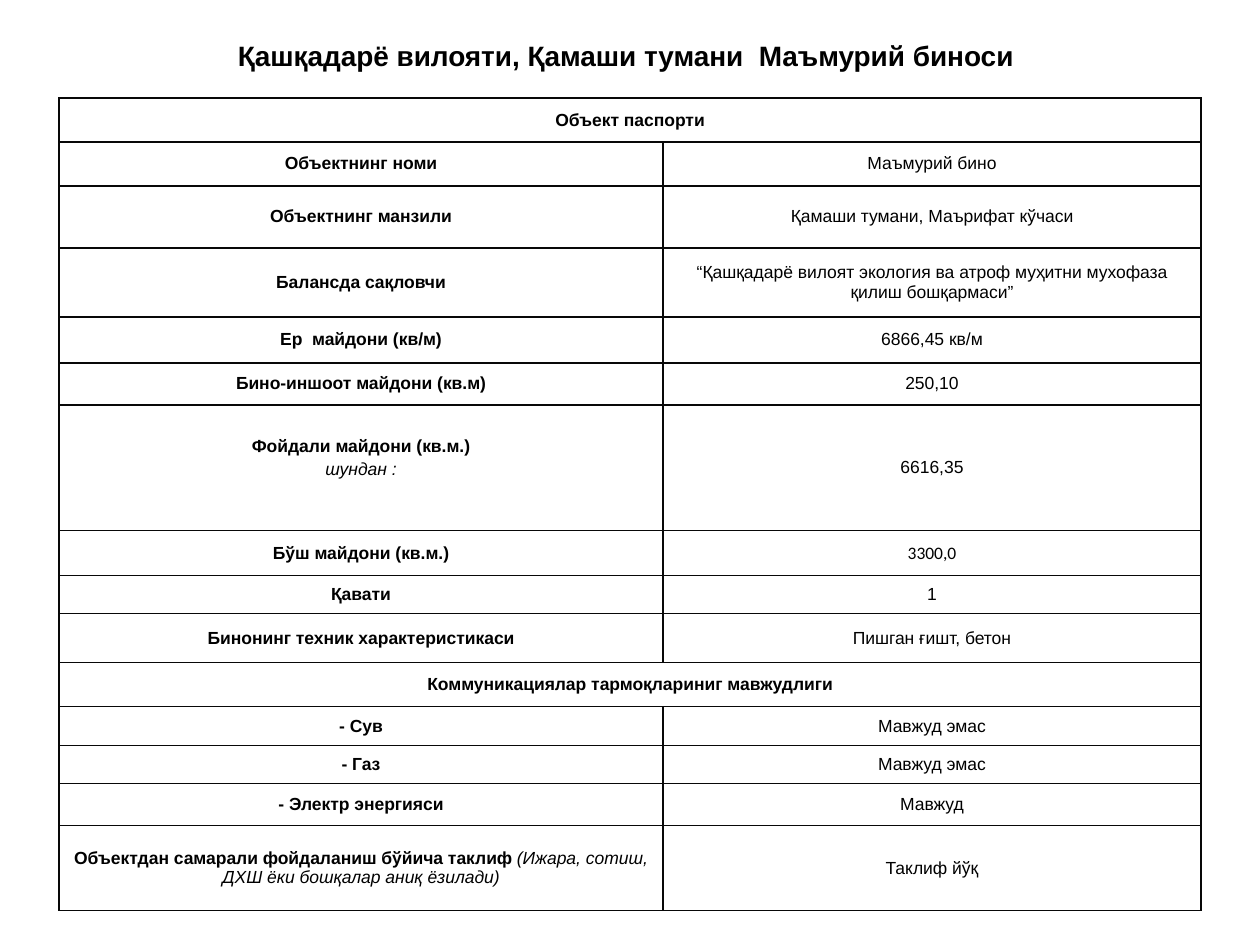
from dataclasses import dataclass

import lxml.etree
import pptx
import pptx.dml.color
import pptx.enum.text
import pptx.oxml.ns
import pptx.util

PX = 914400 // 126
BLACK = pptx.dml.color.RGBColor(0x00, 0x00, 0x00)
NEAR_BLACK = pptx.dml.color.RGBColor(0x08, 0x08, 0x08)
MIDDLE = pptx.enum.text.MSO_ANCHOR.MIDDLE
CENTER = pptx.enum.text.PP_ALIGN.CENTER

COLUMN_WIDTHS = (604, 538)
TABLE_LEFT, TABLE_TOP = 59, 98
MARGIN_X, MARGIN_Y = 11, 6


@dataclass(frozen=True)
class PassportRow:
    height: int
    label: str
    value: str | None = None  # None makes a heading across both columns
    note: str = ""  # italic text after the label
    note_on_new_line: bool = False
    value_font: str = "Arial"
    label_raise: int = 0


ROWS = (
    PassportRow(44, "Объект паспорти"),
    PassportRow(44, "Объектнинг номи", "Маъмурий бино"),
    PassportRow(62, "Объектнинг манзили", "Қамаши тумани, Маърифат кўчаси"),
    PassportRow(69, "Балансда сақловчи",
                "“Қашқадарё вилоят экология ва атроф муҳитни мухофаза қилиш бошқармаси”"),
    PassportRow(46, "Ер  майдони (кв/м)", "6866,45 кв/м"),
    PassportRow(42, "Бино-иншоот майдони (кв.м)", "250,10"),
    PassportRow(126, "Фойдали майдони (кв.м.)", "6616,35", note="шундан :",
                note_on_new_line=True, label_raise=10),
    PassportRow(45, "Бўш майдони (кв.м.)", "3300,0", value_font="Calibri"),
    PassportRow(38, "Қавати", "1"),
    PassportRow(49, "Бинонинг техник характеристикаси", "Пишган ғишт, бетон"),
    PassportRow(44, "Коммуникациялар тармоқлариниг мавжудлиги"),
    PassportRow(39, "- Сув", "Мавжуд эмас"),
    PassportRow(38, "- Газ", "Мавжуд эмас"),
    PassportRow(42, "- Электр энергияси", "Мавжуд"),
    PassportRow(85, "Объектдан самарали фойдаланиш бўйича таклиф ", "Таклиф йўқ",
                note="(Ижара, сотиш, ДХШ ёки бошқалар аниқ ёзилади)"),
)


def style_paragraph(paragraph, size: int = 10, name: str = "Arial") -> None:
    paragraph.alignment = CENTER
    paragraph.font.size = pptx.util.Pt(size)
    paragraph.font.name = name
    paragraph.font.color.rgb = BLACK


def add_run(paragraph, text: str, bold: bool = False, italic: bool = False) -> None:
    run = paragraph.add_run()
    run.text = text
    run.font.bold = bold
    run.font.italic = italic


def format_cell(cell) -> None:
    """Clear the style's fill and draw a thin line on every side."""
    cell.vertical_anchor = MIDDLE
    cell.margin_left = cell.margin_right = MARGIN_X * PX
    cell.margin_top = cell.margin_bottom = MARGIN_Y * PX
    properties = cell._tc.get_or_add_tcPr()
    for side in ("lnL", "lnR", "lnT", "lnB"):
        line = lxml.etree.SubElement(properties, pptx.oxml.ns.qn(f"a:{side}"),
                                     w=str(pptx.util.Pt(1)))
        fill = lxml.etree.SubElement(line, pptx.oxml.ns.qn("a:solidFill"))
        lxml.etree.SubElement(fill, pptx.oxml.ns.qn("a:srgbClr"), val=str(NEAR_BLACK))
    cell.fill.background()


def fill_label(cell, row: PassportRow) -> None:
    paragraph = cell.text_frame.paragraphs[0]
    style_paragraph(paragraph)
    add_run(paragraph, row.label, bold=True)
    cell.margin_bottom = (MARGIN_Y + 2 * row.label_raise) * PX
    if row.note_on_new_line:
        paragraph = cell.text_frame.add_paragraph()
        style_paragraph(paragraph)
        paragraph.space_before = pptx.util.Pt(2)
    if row.note:
        add_run(paragraph, row.note, italic=True)


def add_passport(slide) -> None:
    table = slide.shapes.add_table(
        len(ROWS), len(COLUMN_WIDTHS), TABLE_LEFT * PX, TABLE_TOP * PX,
        sum(COLUMN_WIDTHS) * PX, sum(row.height for row in ROWS) * PX).table
    table.first_row = table.horz_banding = False
    for column, width in zip(table.columns, COLUMN_WIDTHS):
        column.width = width * PX
    for index, row in enumerate(ROWS):
        table.rows[index].height = row.height * PX
        label, value = table.cell(index, 0), table.cell(index, 1)
        format_cell(label)
        format_cell(value)
        fill_label(label, row)
        if row.value is None:
            label.merge(value)
        else:
            paragraph = value.text_frame.paragraphs[0]
            style_paragraph(paragraph, name=row.value_font)
            paragraph.text = row.value


def add_title(slide) -> None:
    title = slide.shapes.add_textbox(59 * PX, 20 * PX, 1134 * PX, 118 * PX)
    frame = title.text_frame
    frame.word_wrap = True
    frame.margin_top = 19 * PX
    paragraph = frame.paragraphs[0]
    paragraph.text = "Қашқадарё вилояти, Қамаши тумани  Маъмурий биноси"
    style_paragraph(paragraph, size=16)
    paragraph.font.bold = True


def main() -> None:
    presentation = pptx.Presentation()
    presentation.slide_width = pptx.util.Inches(10)
    presentation.slide_height = pptx.util.Inches(7.5)
    slide = presentation.slides.add_slide(presentation.slide_layouts[6])
    add_title(slide)
    add_passport(slide)
    presentation.save("out.pptx")


if __name__ == "__main__":
    main()
